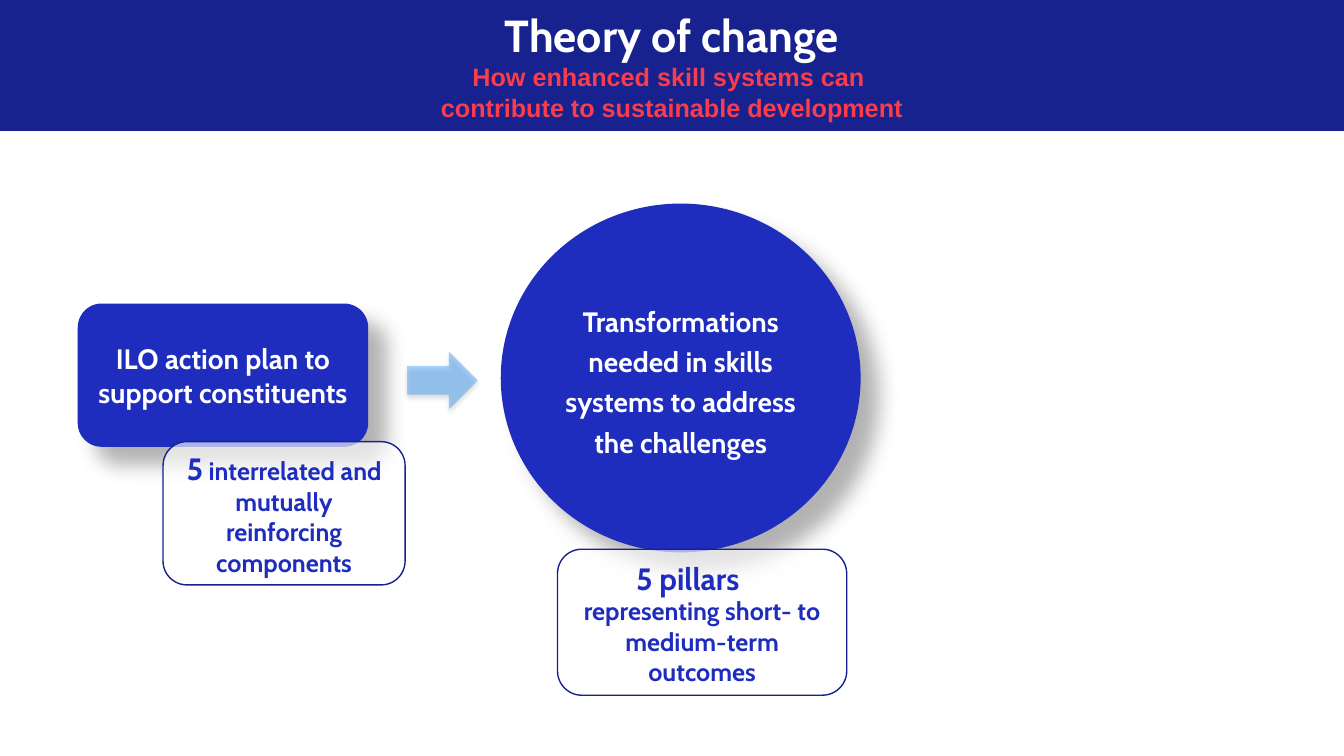
from dataclasses import dataclass

from lxml import etree
from pptx import Presentation
from pptx.dml.color import RGBColor
from pptx.enum.shapes import MSO_SHAPE
from pptx.enum.text import MSO_ANCHOR, PP_ALIGN
from pptx.oxml.ns import qn
from pptx.util import Cm, Pt

RECT, ROUND = MSO_SHAPE.RECTANGLE, MSO_SHAPE.ROUNDED_RECTANGLE
OVAL, ARROW = MSO_SHAPE.OVAL, MSO_SHAPE.RIGHT_ARROW
MIDDLE = MSO_ANCHOR.MIDDLE
CENTER, LEFT = PP_ALIGN.CENTER, PP_ALIGN.LEFT

NAVY, BLUE, OUTLINE = "17228E", "1E2DBE", "16218D"
WHITE, RED, SKY = "FFFFFF", "FA3C4B", "3399FF"
HEAD_FONT, SUB_FONT = "Cabin", "Arial"


@dataclass
class Shadow:
    alpha: int
    blur: float
    dist: float
    angle: int


@dataclass
class Piece:
    text: str
    size: int
    color: str
    font: str = HEAD_FONT


@dataclass
class Block:
    kind: int
    left: float
    top: float
    width: float
    height: float
    fill: str
    alpha: int = 100
    line: str = ""
    shadow: Shadow | None = None
    pieces: tuple[Piece, ...] = ()
    spacing: float = 1.0
    inset_top: float = 0.13


DEEP = Shadow(30, 15, 18, 45)
SOFT = Shadow(32, 3.5, 2.2, 90)

BAND = Block(RECT, 0, 0, 33.87, 3.3, NAVY)
BLOCKS = [
    Block(ROUND, 1.96, 7.65, 7.32, 3.61, BLUE, shadow=DEEP,
          pieces=(Piece("ILO action plan to support constituents", 20, WHITE),)),
    Block(ROUND, 4.11, 11.13, 6.1, 3.61, WHITE, 64, OUTLINE,
          pieces=(Piece("5", 22, BLUE),
                  Piece(" interrelated and mutually reinforcing components", 18, BLUE))),
    Block(ARROW, 10.26, 8.86, 1.78, 1.45, SKY, 43, shadow=SOFT),
    Block(OVAL, 12.62, 5.13, 9.07, 8.79, BLUE, shadow=DEEP, spacing=1.2,
          pieces=(Piece("Transformations needed in skills systems to address "
                        "the challenges", 20, WHITE),)),
    Block(ROUND, 14.05, 13.84, 7.29, 3.68, WHITE, 64, OUTLINE, inset_top=1.07,
          pieces=(Piece("representing short- to medium-term outcomes", 18, BLUE),)),
]


def rgb(value: str) -> RGBColor:
    return RGBColor.from_string(value)


def add_alpha(color, percent: int) -> None:
    etree.SubElement(color, qn("a:alpha"), val=str(percent * 1000))


def add_shadow(sp, shadow: Shadow) -> None:
    effects = sp._element.spPr.find(qn("a:effectLst"))
    outer = etree.SubElement(
        effects, qn("a:outerShdw"), blurRad=str(Pt(shadow.blur)),
        dist=str(Pt(shadow.dist)), dir=str(shadow.angle * 60000),
        algn="tl", rotWithShape="0")
    add_alpha(etree.SubElement(outer, qn("a:srgbClr"), val="000000"), shadow.alpha)


def add_pieces(p, pieces: tuple[Piece, ...], align=CENTER) -> None:
    p.alignment = align
    for piece in pieces:
        r = p.add_run()
        r.text = piece.text
        r.font.name = piece.font
        r.font.size = Pt(piece.size)
        r.font.bold = True
        r.font.color.rgb = rgb(piece.color)


def draw_block(s, b: Block) -> None:
    sp = s.shapes.add_shape(b.kind, Cm(b.left), Cm(b.top), Cm(b.width), Cm(b.height))
    sp.shadow.inherit = False
    sp.fill.solid()
    sp.fill.fore_color.rgb = rgb(b.fill)
    if b.alpha < 100:
        add_alpha(sp._element.spPr.find(qn("a:solidFill"))[0], b.alpha)
    if b.line:
        sp.line.color.rgb = rgb(b.line)
        sp.line.width = Pt(1)
    else:
        sp.line.fill.background()
    if b.shadow:
        add_shadow(sp, b.shadow)
    if b.pieces:
        tf = sp.text_frame
        tf.word_wrap = True
        tf.vertical_anchor = MIDDLE
        tf.margin_top = Cm(b.inset_top)
        p = tf.paragraphs[0]
        p.line_spacing = b.spacing
        add_pieces(p, b.pieces)


def draw_text(s, left: float, top: float, width: float, height: float,
              lines: tuple[Piece, ...], align=CENTER, inset: float = 0):
    tf = s.shapes.add_textbox(Cm(left), Cm(top), Cm(width), Cm(height)).text_frame
    tf.word_wrap = True
    tf.margin_left = tf.margin_right = Cm(2 * inset)
    tf.margin_top = tf.margin_bottom = Cm(inset)
    for i, line in enumerate(lines):
        p = tf.add_paragraph() if i else tf.paragraphs[0]
        add_pieces(p, (line,), align)


def main() -> None:
    prs = Presentation()
    prs.slide_width, prs.slide_height = Cm(33.87), Cm(19.05)
    s = prs.slides.add_slide(prs.slide_layouts[6])

    # Header band and title
    draw_block(s, BAND)
    draw_text(s, 0, 0.2, 33.87, 2.01, (
        Piece("Theory of change", 32, WHITE),
        Piece("How enhanced skill systems can ", 18, RED, SUB_FONT),
        Piece("contribute to sustainable development", 18, RED, SUB_FONT)))

    # Flow from action plan to transformations
    for block in BLOCKS:
        draw_block(s, block)

    # Heading inside the pillars box
    draw_text(s, 15.77, 13.97, 3.89, 1.19, (Piece("5 pillars", 22, BLUE),), LEFT, 0.13)

    prs.save("out.pptx")


if __name__ == "__main__":
    main()
